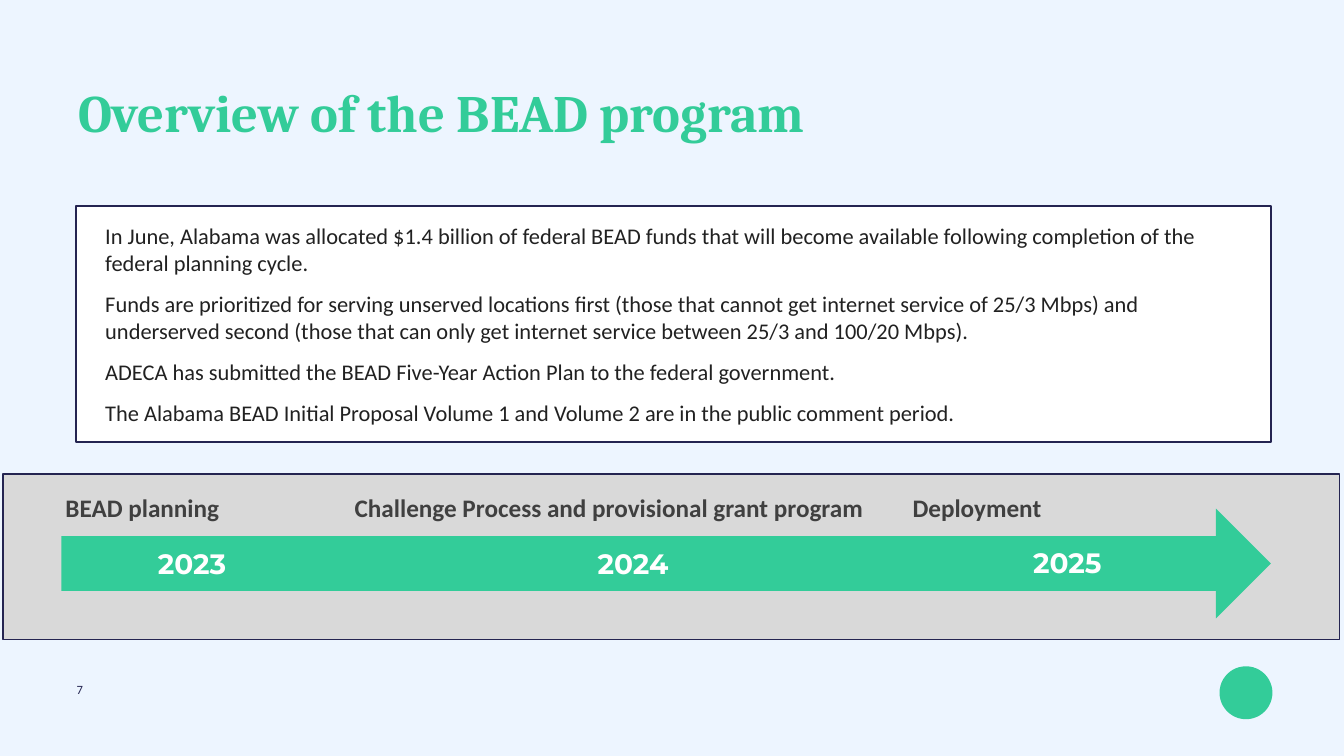
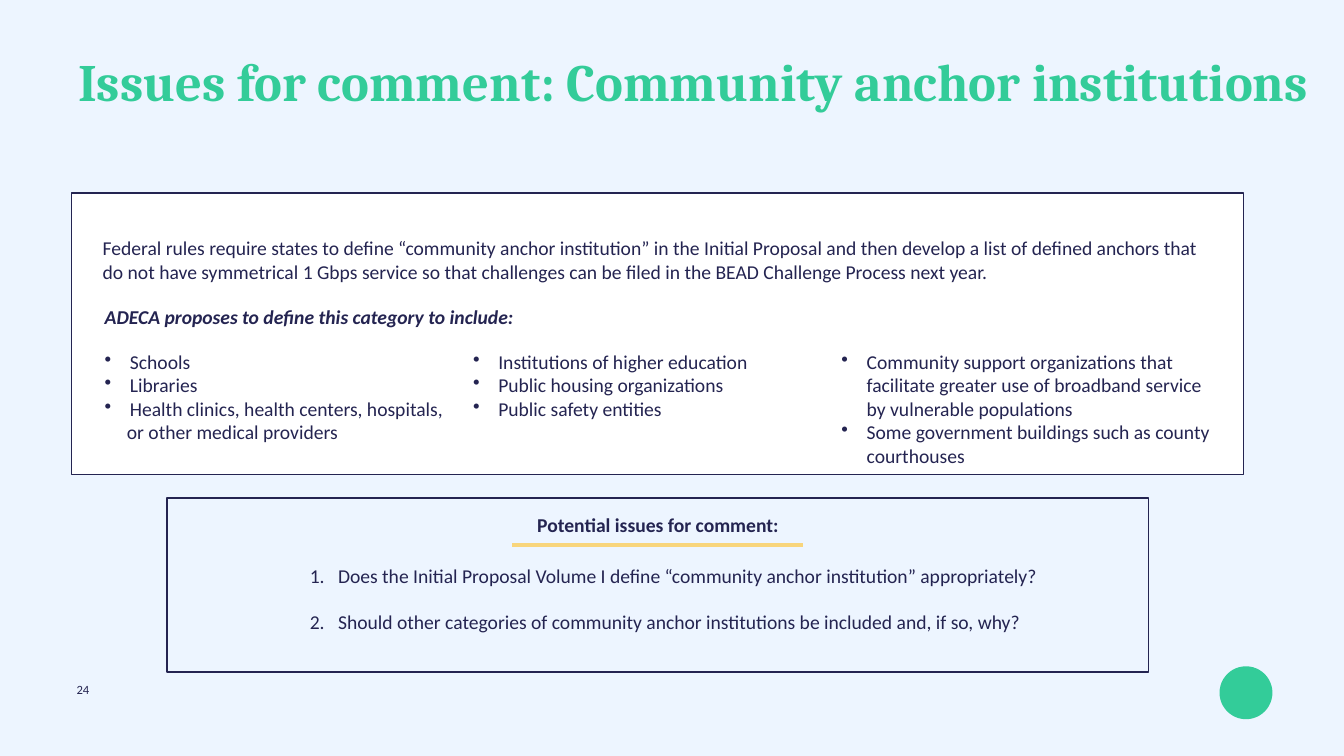
from dataclasses import dataclass
from typing import Optional, Sequence

import pptx
import pptx.dml.color
import pptx.enum.shapes
import pptx.enum.text
import pptx.oxml.ns
import pptx.presentation
import pptx.slide
import pptx.util
from lxml import etree

RGB = pptx.dml.color.RGBColor
SHAPE = pptx.enum.shapes.MSO_SHAPE
ALIGN = pptx.enum.text.PP_ALIGN
ANCHOR = pptx.enum.text.MSO_ANCHOR
qn = pptx.oxml.ns.qn

PALE_BLUE = RGB(0xED, 0xF5, 0xFF)
GREEN = RGB(0x33, 0xCC, 0x99)
NAVY = RGB(0x24, 0x24, 0x51)
WHITE = RGB(0xFF, 0xFF, 0xFF)
BAND_GREY = RGB(0xD9, 0xD9, 0xD9)
LABEL_GREY = RGB(0x40, 0x40, 0x40)
INK = RGB(0x21, 0x21, 0x21)
YELLOW = RGB(0xF8, 0xD5, 0x7C)

BODY_FONT, TITLE_FONT, YEAR_FONT = "Calibri", "Cambria", "Montserrat"
EMU_PER_PX = 9144


@dataclass(frozen=True)
class Area:
    left: int
    top: int
    width: int
    height: int

    def emu(self) -> list[int]:
        return [px(n) for n in (self.left, self.top, self.width, self.height)]


@dataclass(frozen=True)
class Item:
    words: str
    bullet: str = ""
    numbered: bool = False
    margin: int = 0
    hanging: int = 0


@dataclass(frozen=True)
class Year:
    label: str
    left: int
    top: int


def px(count: int) -> int:
    return pptx.util.Emu(count * EMU_PER_PX)


def bulleted(words: str) -> Item:
    return Item(words, bullet="•", margin=50, hanging=50)


def numbered(words: str) -> Item:
    return Item(words, numbered=True, margin=56, hanging=56)


def add_panel(slide: pptx.slide.Slide, kind: SHAPE, area: Area,
              fill: Optional[RGB] = None, border: float = 0) -> None:
    panel = slide.shapes.add_shape(kind, *area.emu())
    panel.shadow.inherit = False
    if fill is None:
        panel.fill.background()
    else:
        panel.fill.solid()
        panel.fill.fore_color.rgb = fill
    if border:
        panel.line.color.rgb = NAVY
        panel.line.width = pptx.util.Pt(border)
    else:
        panel.line.fill.background()


def add_text(slide: pptx.slide.Slide, area: Area, content: Sequence[str | Item], *,
             size: int = 28, font: str = BODY_FONT, color: RGB = NAVY,
             bold: bool = False, italic: bool = False, align: ALIGN = ALIGN.LEFT,
             anchor: ANCHOR = ANCHOR.TOP, line_spacing: Optional[float] = None,
             before: int = 0, after: int = 0, tabs: Sequence[int] = ()) -> None:
    frame = slide.shapes.add_textbox(*area.emu()).text_frame
    frame.word_wrap = True
    frame.vertical_anchor = anchor
    for index, entry in enumerate(content):
        item = Item(entry) if isinstance(entry, str) else entry
        paragraph = frame.paragraphs[0] if index == 0 else frame.add_paragraph()
        properties = paragraph._p.get_or_add_pPr()
        if item.margin:
            properties.set("marL", str(px(item.margin)))
            properties.set("indent", str(px(-item.hanging)))
        if item.bullet:
            etree.SubElement(properties, qn("a:buChar"), char=item.bullet)
        if item.numbered:
            etree.SubElement(properties, qn("a:buAutoNum"), type="arabicPeriod")
        if tabs:
            stops = etree.SubElement(properties, qn("a:tabLst"))
            for stop in tabs:
                etree.SubElement(stops, qn("a:tab"), pos=str(px(stop)), algn="l")
        paragraph.alignment = align
        if line_spacing:
            paragraph.line_spacing = line_spacing
        if before and index:
            paragraph.space_before = pptx.util.Pt(before)
        if after:
            paragraph.space_after = pptx.util.Pt(after)
        run = paragraph.add_run()
        run.text = item.words
        run.font.name = font
        run.font.size = pptx.util.Pt(size)
        run.font.bold = bold
        run.font.italic = italic
        run.font.color.rgb = color


def add_rule(slide: pptx.slide.Slide, left: int, right: int, y: int) -> None:
    rule = slide.shapes.add_connector(
        pptx.enum.shapes.MSO_CONNECTOR.STRAIGHT, px(left), px(y), px(right), px(y))
    rule.line.color.rgb = YELLOW
    rule.line.width = pptx.util.Pt(5)
    etree.SubElement(rule._element.spPr, qn("a:effectLst"))


def start_slide(deck: pptx.presentation.Presentation, title: str, title_area: Area,
                number: int) -> pptx.slide.Slide:
    slide = deck.slides.add_slide(deck.slide_layouts[6])
    slide.background.fill.solid()
    slide.background.fill.fore_color.rgb = PALE_BLUE
    add_panel(slide, SHAPE.OVAL, Area(2420, 1322, 105, 105), GREEN)
    add_text(slide, title_area, [title], size=75, font=TITLE_FONT, color=GREEN,
             bold=True, line_spacing=0.9)
    add_text(slide, Area(142, 1352, 1918, 37), [str(number)], size=18, line_spacing=0.9)
    return slide


def build_overview(deck: pptx.presentation.Presentation) -> None:
    slide = start_slide(deck, "Overview of the BEAD program",
                        Area(145, 167, 2376, 125), 7)
    add_panel(slide, SHAPE.RECTANGLE, Area(6, 941, 2652, 328), BAND_GREY, 2.5)
    add_panel(slide, SHAPE.RIGHT_ARROW, Area(122, 1009, 2400, 218), GREEN)
    add_panel(slide, SHAPE.RECTANGLE, Area(150, 409, 2372, 468), WHITE, 2.75)
    add_text(slide, Area(53, 972, 2554, 71),
             ["\tBEAD planning\tChallenge Process and provisional grant program\tDeployment"],
             size=36, color=LABEL_GREY, bold=True, tabs=(67, 641, 1748))
    for year in (Year("2023", 285, 1079), Year("2024", 1160, 1079), Year("2025", 2022, 1077)):
        add_text(slide, Area(year.left, year.top, 192, 77), [year.label], size=40,
                 font=YEAR_FONT, color=WHITE, bold=True, align=ALIGN.CENTER)
    add_text(slide, Area(199, 409, 2280, 468), [
        "In June, Alabama was allocated $1.4 billion of federal BEAD funds that will become "
        "available following completion of the federal planning cycle.",
        "Funds are prioritized for serving unserved locations first (those that cannot get "
        "internet service of 25/3 Mbps) and underserved second (those that can only get "
        "internet service between 25/3 and 100/20 Mbps).",
        "ADECA has submitted the BEAD Five-Year Action Plan to the federal government.",
        "The Alabama BEAD Initial Proposal Volume 1 and Volume 2 are in the public comment period.",
    ], size=32, color=INK, anchor=ANCHOR.MIDDLE, before=20)


def build_anchor_institutions(deck: pptx.presentation.Presentation) -> None:
    slide = start_slide(deck, "Issues for comment: Community anchor institutions",
                        Area(145, 107, 2481, 185), 24)
    add_panel(slide, SHAPE.RECTANGLE, Area(142, 383, 2326, 558), WHITE, 2)
    add_text(slide, Area(194, 464, 2214, 128), [
        "Federal rules require states to define “community anchor institution” in the Initial "
        "Proposal and then develop a list of defined anchors that do not have symmetrical "
        "1 Gbps service so that challenges can be filed in the BEAD Challenge Process next year.",
    ])
    add_text(slide, Area(198, 606, 2054, 53),
             ["ADECA proposes to define this category to include:"],
             bold=True, italic=True, line_spacing=0.9)

    categories = (
        [bulleted("Schools"),
         bulleted("Libraries"),
         bulleted("Health clinics, health centers, hospitals,"),
         Item("or other medical providers", margin=44)],
        [bulleted("Institutions of higher education"),
         bulleted("Public housing organizations"),
         bulleted("Public safety entities")],
        [bulleted("Community support organizations that facilitate greater use of "
                  "broadband service by vulnerable populations"),
         bulleted("Some government buildings such as county courthouses")],
    )
    for column, category in enumerate(categories):
        add_text(slide, Area(198 + column * 731, 689, 751, 250), category)

    add_panel(slide, SHAPE.RECTANGLE, Area(332, 988, 1947, 345), border=2.5)
    add_text(slide, Area(332, 1019, 1947, 53), ["Potential issues for comment:"],
             bold=True, align=ALIGN.CENTER, line_spacing=0.9)
    add_rule(slide, 1017, 1594, 1081)
    add_text(slide, Area(605, 1114, 1647, 178), [
        numbered("Does the Initial Proposal Volume I define “community anchor institution” "
                 "appropriately?"),
        numbered("Should other categories of community anchor institutions be included and, "
                 "if so, why?"),
    ], before=20, after=12)


def main() -> None:
    deck = pptx.Presentation()
    deck.slide_width, deck.slide_height = px(2667), px(1500)
    build_overview(deck)
    build_anchor_institutions(deck)
    deck.save("out.pptx")


if __name__ == "__main__":
    main()
